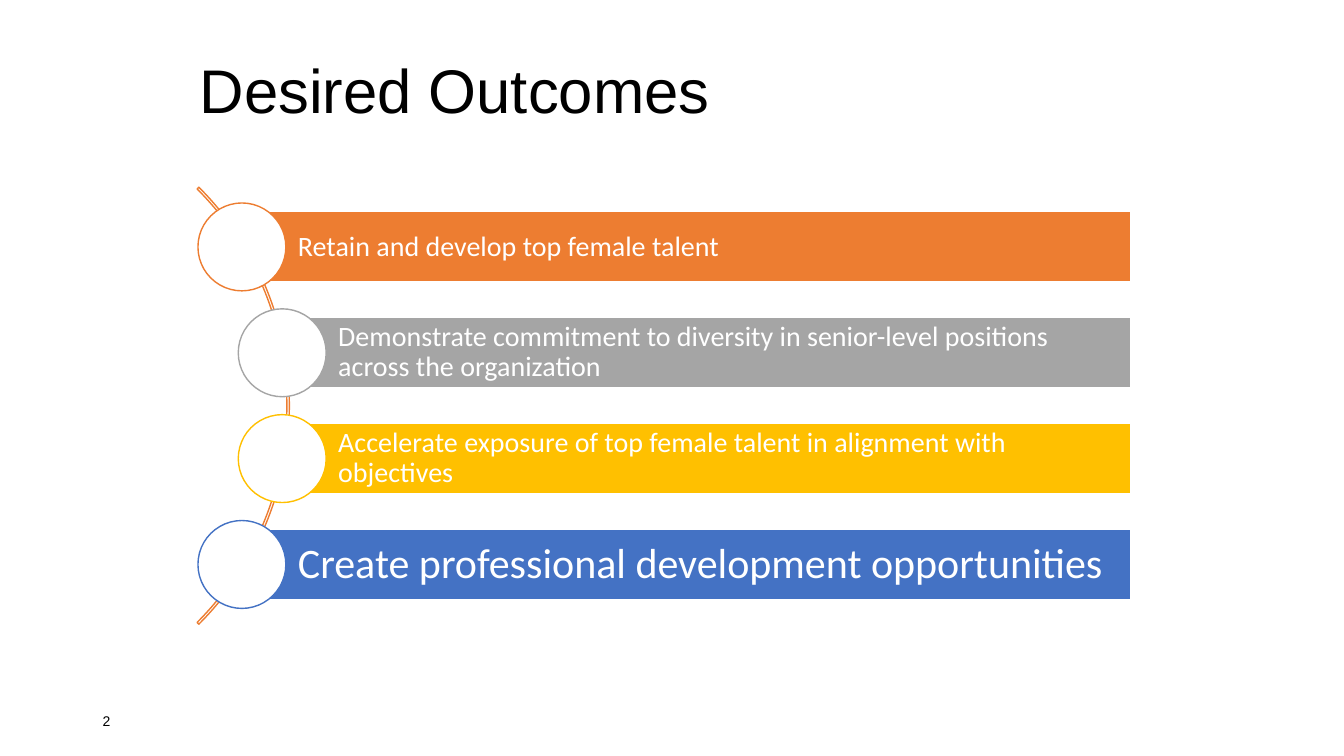
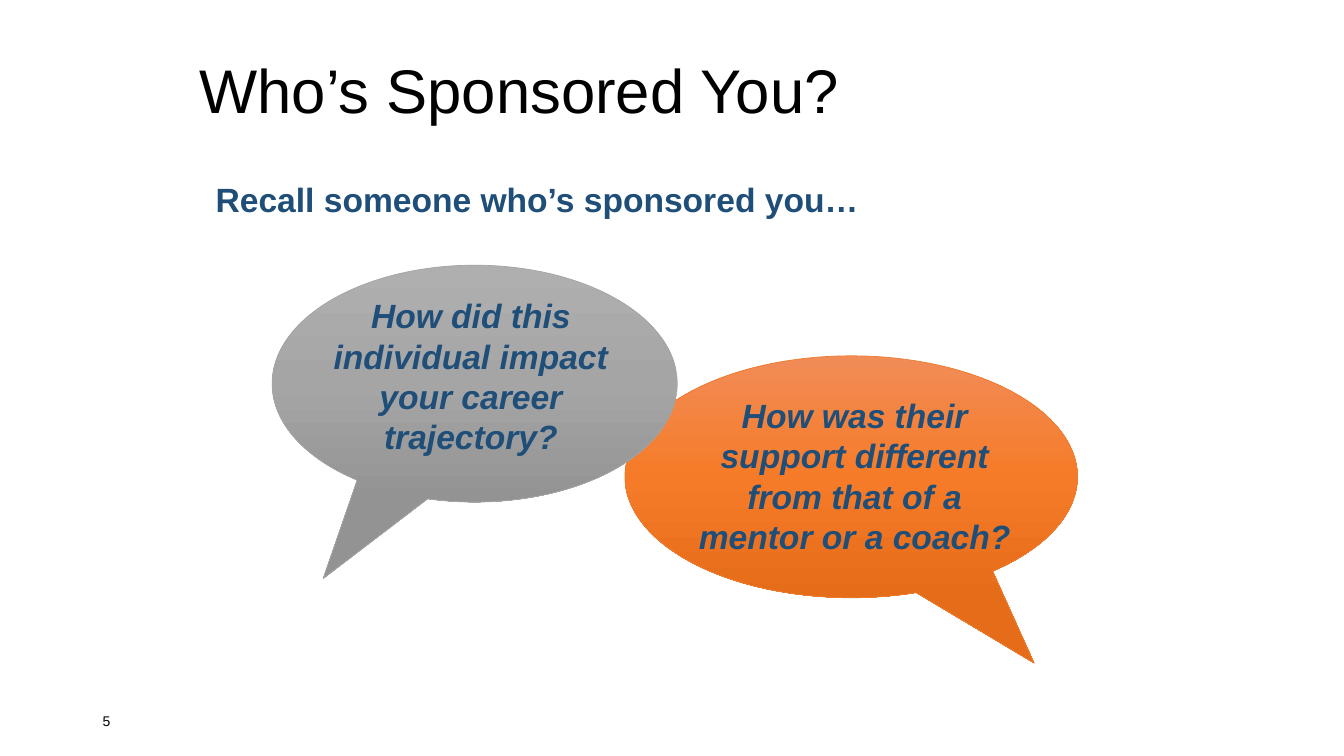
from copy import deepcopy
from dataclasses import dataclass

from pptx import Presentation
from pptx.dml.color import RGBColor
from pptx.enum import shapes, text
from pptx.oxml.ns import qn
from pptx.util import Pt


@dataclass(frozen=True)
class Theme:
    black: str = "000000"
    white: str = "FFFFFF"
    navy: str = "1F4E79"
    orange: str = "ED7D31"
    grey: str = "A5A5A5"
    gold: str = "FFC000"
    blue: str = "4472C4"
    head: str = "Arial"
    body: str = "Calibri"
    title: int = 44
    large: int = 30
    lead: int = 24
    bar: int = 20
    page: int = 10


T = Theme()
KIND = shapes.MSO_SHAPE
MID, TOP = text.MSO_ANCHOR.MIDDLE, text.MSO_ANCHOR.TOP
LEFT, MIDDLE = text.PP_ALIGN.LEFT, text.PP_ALIGN.CENTER

# Content: wording, colour, size, indented or not
GOALS = {
    "title": "Desired Outcomes",
    "page": "2",
    "bars": [
        ("Retain and develop top female talent", T.orange, T.bar, False),
        ("Demonstrate commitment to diversity in senior-level positions "
         "across the organization", T.grey, T.bar, True),
        ("Accelerate exposure of top female talent in alignment with "
         "objectives", T.gold, T.bar, True),
        ("Create professional development opportunities",
         T.blue, T.large, False),
    ],
}
ASK = {
    "title": "Who’s Sponsored You?",
    "page": "5",
    "lead": "Recall someone who’s sponsored you…",
    # wording, text box, balloon box, tail, line, gradient
    "balloons": [
        ("How was their support different from that of a mentor or a coach?",
         (483.8, 278.6, 253.4, 123.8), (446.4, 254.2, 323.3, 172.8),
         (0.404, 0.77), T.orange, ("F18C57", "F67B28", "E56C19")),
        ("How did this individual impact your career trajectory?",
         (207.4, 207.4, 257.8, 123.8), (194.4, 189.4, 289.4, 169.2),
         (-0.374, 0.823), T.grey, ("AFAFAF", "A5A5A5", "939393")),
    ],
}

# Geometry of the bar list
RIGHT, FIRST, STEP, HIGH = 807.8, 151.2, 75.6, 50.4
EDGE, SHIFT, DISC, ARC = 172.8, 28.8, 62.8, 441.4
ARC_LEFT = -234.7


def rgb(code):
    return RGBColor.from_string(code)


def write(frame, words, size, color, face=T.head, anchor=TOP, align=LEFT,
          bold=False, slant=False, space=None):
    frame.word_wrap = True
    frame.vertical_anchor = anchor
    frame.text = words
    para = frame.paragraphs[0]
    para.alignment = align
    para.line_spacing = space
    font = para.font
    font.size, font.name, font.color.rgb = Pt(size), face, rgb(color)
    font.bold, font.italic = bold, slant


def label(slide, box, *args, **style):
    frame = slide.shapes.add_textbox(*map(Pt, box)).text_frame
    write(frame, *args, **style)


def draw(slide, kind, box, line, fill=None, width=1):
    shape = slide.shapes.add_shape(kind, *map(Pt, box))
    shape.shadow.inherit = False
    shape.line.color.rgb = rgb(line)
    shape.line.width = Pt(width)
    if fill:
        shape.fill.solid()
        shape.fill.fore_color.rgb = rgb(fill)
    else:
        shape.fill.background()
    return shape


def shade(shape, colors):
    """Fill from top to bottom with evenly spaced colours."""
    fill = shape.fill
    fill.gradient()
    fill.gradient_angle = 270
    stops = shape.element.spPr.find(".//" + qn("a:gsLst"))
    stops.insert(1, deepcopy(stops[0]))
    for i, (stop, color) in enumerate(zip(fill.gradient_stops, colors)):
        stop.color.rgb = rgb(color)
        stop.position = i / (len(colors) - 1)


def start(deck, data):
    """Add a slide with its title and page number."""
    slide = deck.slides.add_slide(deck.slide_layouts[5])
    title = slide.shapes.title
    title.left, title.top = Pt(135.4), Pt(21.6)
    title.width, title.height = Pt(685.4), Pt(90)
    write(title.text_frame, data["title"], T.title, T.black,
          anchor=MID, space=0.9)
    label(slide, (66.2, 500.4, 216, 28.8), data["page"], T.page, T.black,
          anchor=MID)
    return slide


def goals(deck):
    slide = start(deck, GOALS)
    bars = GOALS["bars"]

    # Arc centred on the height of the list
    mid = FIRST + ((len(bars) - 1) * STEP + HIGH) / 2
    arc = draw(slide, KIND.BLOCK_ARC, (ARC_LEFT, mid - ARC / 2, ARC, ARC),
               T.orange)
    for i, value in enumerate((189, 27, 0.004)):
        arc.adjustments[i] = value

    # Bars, each with a disc on its left edge
    for i, (words, color, size, inner) in enumerate(bars):
        left, top = EDGE + SHIFT * inner, FIRST + i * STEP
        bar = draw(slide, KIND.RECTANGLE, (left, top, RIGHT - left, HIGH),
                   T.white, color)
        frame = bar.text_frame
        pad = Pt(size / 5)
        frame.margin_left = Pt(40)
        frame.margin_top = frame.margin_right = frame.margin_bottom = pad
        write(frame, words, size, T.white, face=T.body, anchor=MID, space=0.9)
        draw(slide, KIND.OVAL,
             (left - DISC / 2, top + (HIGH - DISC) / 2, DISC, DISC),
             color, T.white)


def ask(deck):
    slide = start(deck, ASK)
    label(slide, (146.9, 124.6, 637.2, 36), ASK["lead"], T.lead, T.navy,
          bold=True)

    # Speech balloons with their questions
    for words, area, box, tail, line, colors in ASK["balloons"]:
        shape = draw(slide, KIND.OVAL_CALLOUT, box, line, width=0.5)
        shape.adjustments[0], shape.adjustments[1] = tail
        shade(shape, colors)
        label(slide, area, words, T.lead, T.navy, align=MIDDLE,
              bold=True, slant=True)


def main():
    deck = Presentation()
    deck.slide_width, deck.slide_height = Pt(960), Pt(540)
    goals(deck)
    ask(deck)
    deck.save("out.pptx")


if __name__ == "__main__":
    main()
